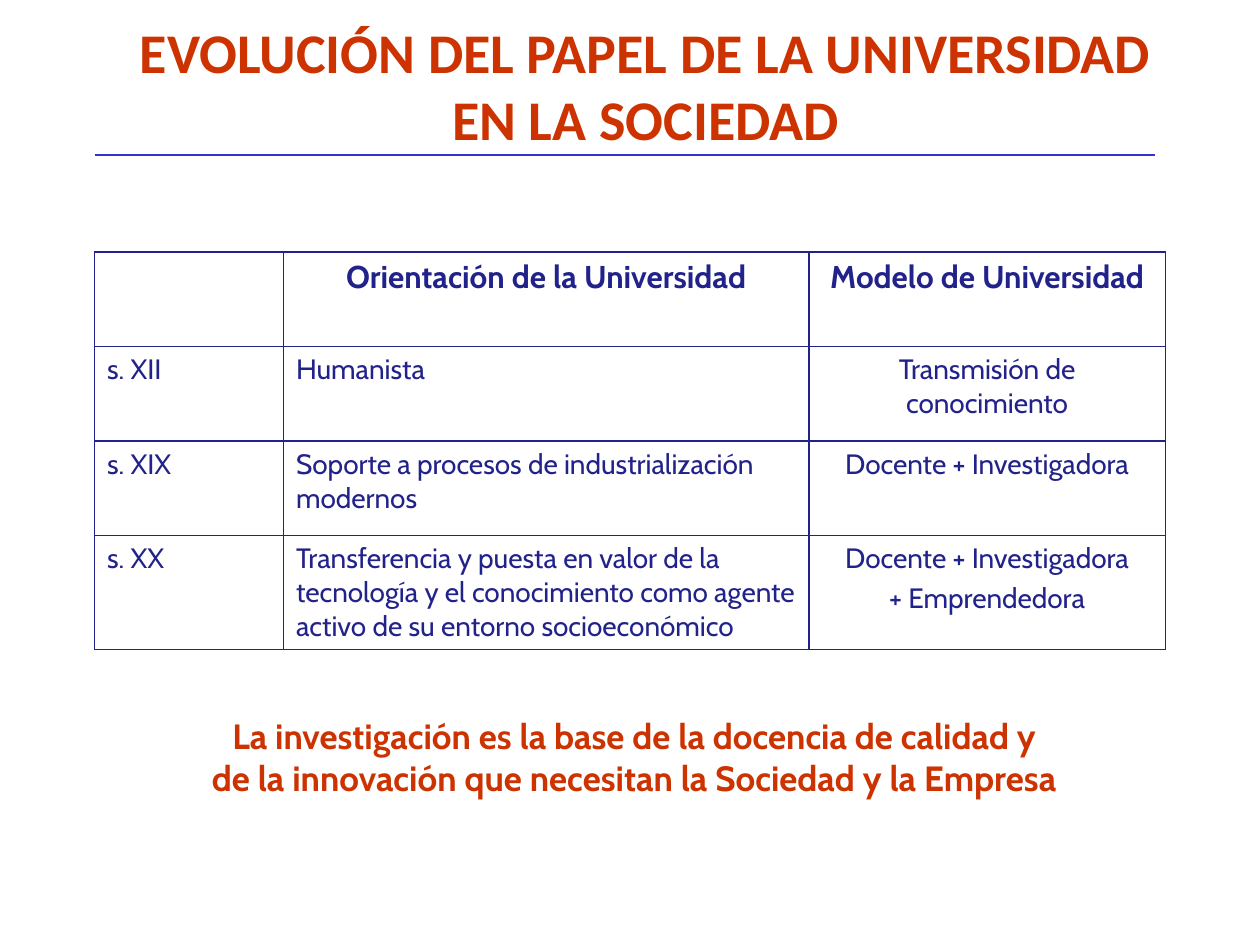
from lxml.etree import SubElement
from pptx import Presentation
from pptx.dml.color import RGBColor
from pptx.enum.shapes import MSO_CONNECTOR as Connector
from pptx.enum.text import MSO_ANCHOR as Anchor, MSO_AUTO_SIZE as AutoSize, PP_ALIGN as Align
from pptx.oxml.ns import qn
from pptx.util import Inches, Pt

NAVY, RUST, RULE = "22228B", "CC3300", "3333CC"
LEFT = 0.75
COLUMNS = [1.5, 4.17, 2.83]
ROW_HEIGHT = 0.75
ROWS = [
    ["", "Orientación de la Universidad", "Modelo de Universidad"],
    ["s. XII", "Humanista", "Transmisión de conocimiento"],
    ["s. XIX", "Soporte a procesos de industrialización modernos", "Docente + Investigadora"],
    ["s. XX", "Transferencia y puesta en valor de la tecnología y el conocimiento "
     "como agente activo de su entorno socioeconómico",
     "Docente + Investigadora\n+ Emprendedora"],
]


def color(value):
    """Turn a hex string into a colour."""
    return RGBColor.from_string(value)


def style(frame, font, size, value, bold, align):
    """Format every paragraph and run of a text frame."""
    for index, para in enumerate(frame.paragraphs):
        para.alignment = align
        if index:
            para.space_before = Pt(size * 0.2)
        para.font.size = Pt(size)
        for span in para.runs:
            span.font.name, span.font.size, span.font.bold = font, Pt(size), bold
            span.font.color.rgb = color(value)


def add_heading(page, left, top, width, height):
    """Place the slide title and the rule beneath it."""
    title = page.shapes.title
    title.left, title.top, title.width, title.height = map(Inches, (left, top, width, height))
    frame = title.text_frame
    frame.text = "EVOLUCIÓN DEL PAPEL DE LA UNIVERSIDAD EN LA SOCIEDAD"
    frame.word_wrap, frame.auto_size = True, AutoSize.NONE
    frame.vertical_anchor = Anchor.MIDDLE
    style(frame, "Calibri", 32, RUST, True, Align.CENTER)
    level = Inches(top + height + 0.1)
    rule = page.shapes.add_connector(
        Connector.STRAIGHT, Inches(left), level, Inches(left + 8.42), level)
    rule.line.color.rgb, rule.line.width = color(RULE), Pt(0.75)
    SubElement(rule._element.spPr, qn("a:effectLst"))


def add_borders(cell, value, width):
    """Draw a solid line on the four sides of a cell."""
    properties = cell._tc.get_or_add_tcPr()
    for position, side in enumerate(("lnL", "lnR", "lnT", "lnB")):
        line = properties.makeelement(qn(f"a:{side}"), {"w": str(Pt(width))})
        properties.insert(position, line)
        SubElement(SubElement(line, qn("a:solidFill")), qn("a:srgbClr"), val=value)


def add_history(page, left, top, width, height):
    """Place the table of centuries, orientations and models."""
    table = page.shapes.add_table(
        len(ROWS), len(COLUMNS), *map(Inches, (left, top, width, height))).table
    table.first_row = table.horz_banding = False
    for column, share in zip(table.columns, COLUMNS):
        column.width = Inches(share)
    for row, texts in enumerate(ROWS):
        table.rows[row].height = Inches(ROW_HEIGHT)
        header = row == 0
        for column, text in enumerate(texts):
            cell = table.cell(row, column)
            cell.text_frame.text = text
            cell.fill.background()
            align = Align.CENTER if header or column == 2 else Align.LEFT
            style(cell.text_frame, "Cabin", 18 if header else 16, NAVY, header, align)
            add_borders(cell, NAVY, 1)


def add_conclusion(page, left, top, width, height):
    """Place the closing statement."""
    frame = page.shapes.add_textbox(*map(Inches, (left, top, width, height))).text_frame
    frame.word_wrap = True
    frame.text = ("La investigación es la base de la docencia de calidad y "
                  "de la innovación que necesitan la Sociedad y la Empresa")
    style(frame, "Cabin", 20, RUST, True, Align.CENTER)


def main():
    """Build and save the deck."""
    deck = Presentation()
    deck.slide_width, deck.slide_height = Inches(10), Inches(7.5)
    page = deck.slides.add_slide(deck.slide_layouts[5])
    add_heading(page, LEFT, 0.21, 8.75, 0.92)
    add_history(page, LEFT, 2, sum(COLUMNS), ROW_HEIGHT * len(ROWS))
    add_conclusion(page, 1.57, 5.62, 6.93, 1.11)
    deck.save("out.pptx")


if __name__ == "__main__":
    main()
